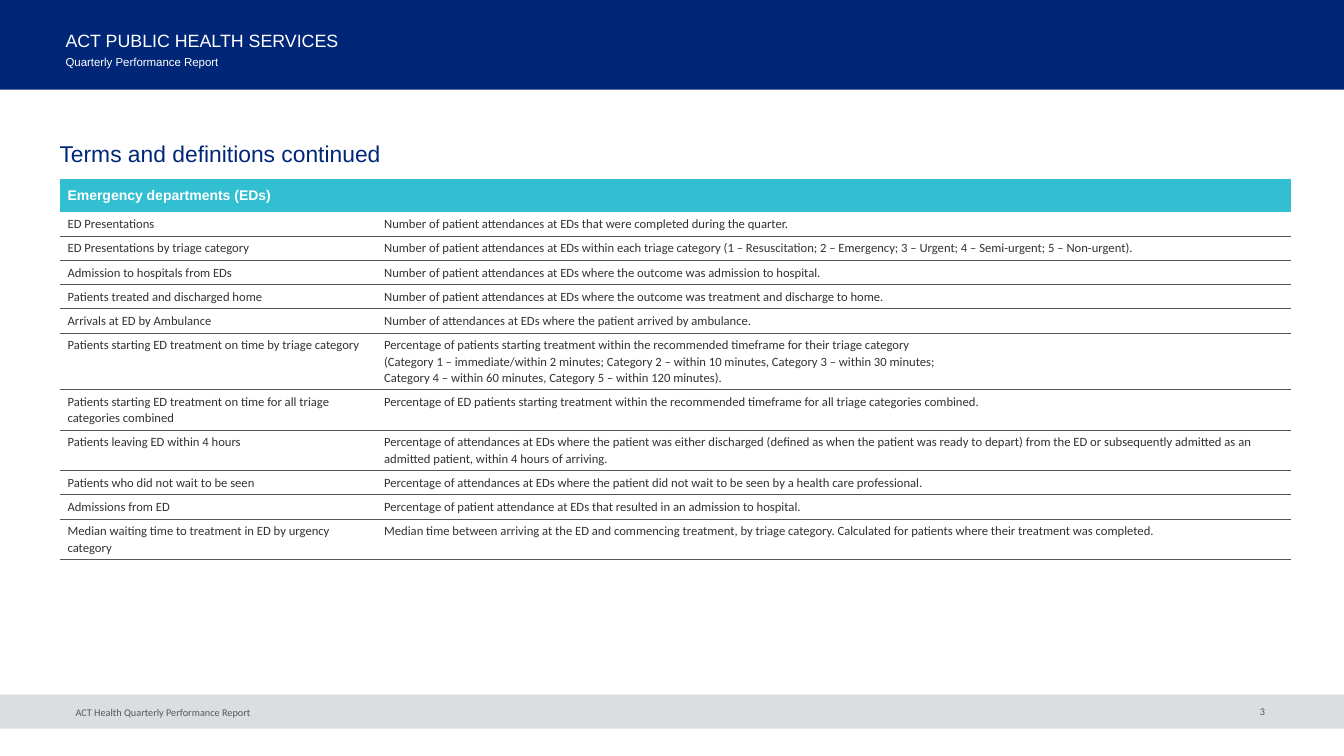
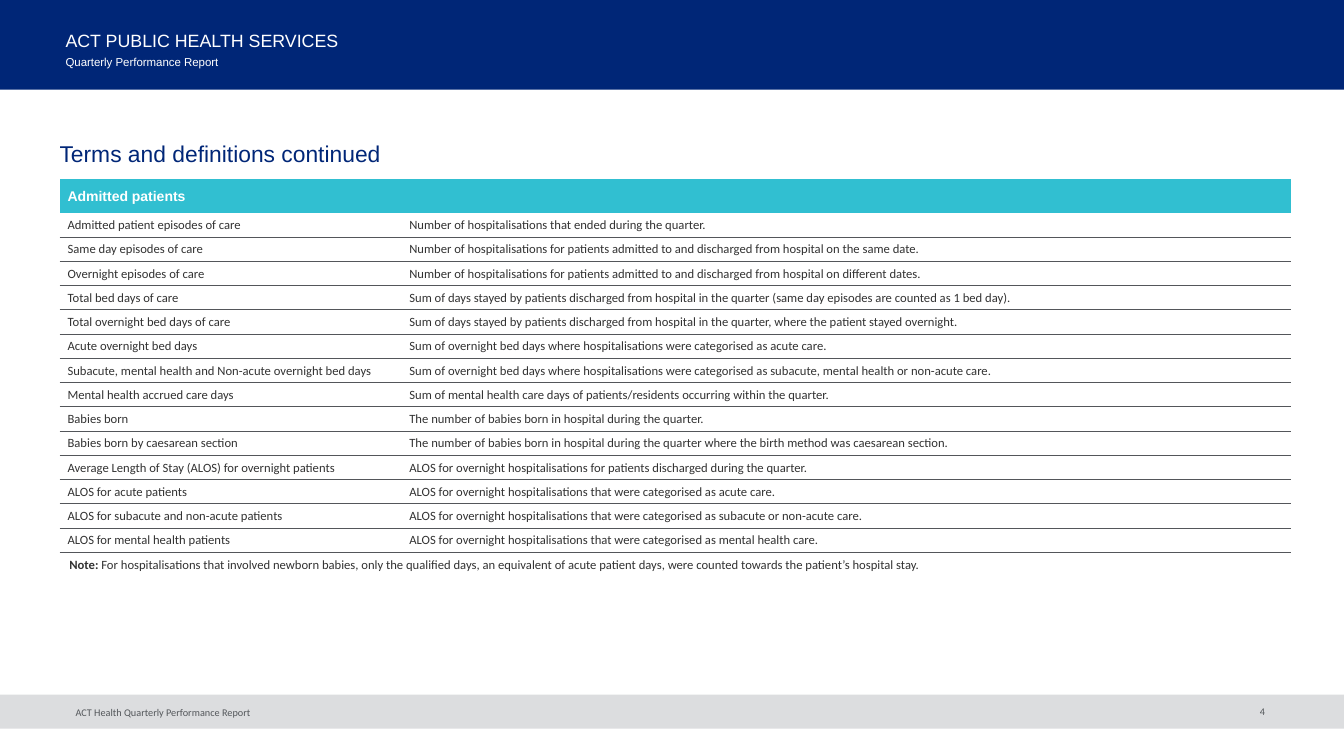
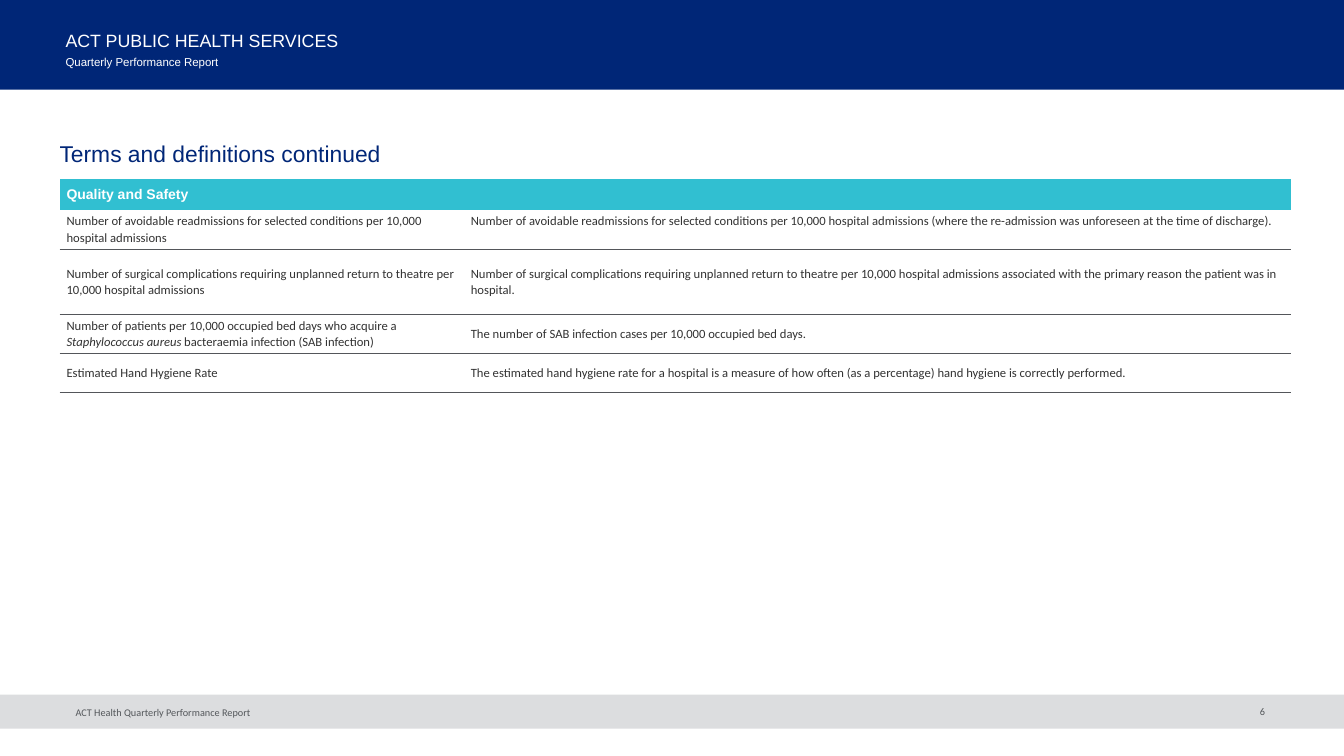
from dataclasses import dataclass
from typing import NamedTuple

from lxml import etree
from pptx import Presentation
from pptx.dml.color import RGBColor
from pptx.enum.shapes import MSO_SHAPE
from pptx.enum.text import MSO_ANCHOR, PP_ALIGN
from pptx.oxml.ns import qn
from pptx.util import Inches, Pt

RECTANGLE = MSO_SHAPE.RECTANGLE
TOP, MIDDLE = MSO_ANCHOR.TOP, MSO_ANCHOR.MIDDLE
LEFT, CENTER = PP_ALIGN.LEFT, PP_ALIGN.CENTER

NAVY = RGBColor(0x00, 0x26, 0x77)
TEAL = RGBColor(0x31, 0xBF, 0xD1)
SILVER = RGBColor(0xDC, 0xDD, 0xDF)
GREY = RGBColor(0x53, 0x56, 0x5A)
INK = RGBColor(0x32, 0x32, 0x32)
WHITE = RGBColor(0xFF, 0xFF, 0xFF)

SLIDE_WIDTH, SLIDE_HEIGHT = Inches(13.33), Inches(7.5)
LINE_PITCH = 0.16
LINE_SPACING = 1.07
RULE_WIDTH = Pt(0.5)
PLAIN_TABLE_STYLE = "{2D5ABB26-0587-4C30-8999-92F81FD0307C}"


class Area(NamedTuple):
    """Place and size as percentages of the slide's width and height."""
    left: float
    top: float
    width: float
    height: float

    def lengths(self) -> list[int]:
        sides = (SLIDE_WIDTH, SLIDE_HEIGHT) * 2
        return [round(side * share / 100) for side, share in zip(sides, self)]


class Span(NamedTuple):
    text: str
    bold: bool = False
    italic: bool = False


class Style(NamedTuple):
    font: str
    size: float
    color: RGBColor
    bold: bool = False


Content = str | tuple[Span, ...]


@dataclass(frozen=True)
class Label:
    area: Area
    style: Style
    anchor: MSO_ANCHOR = TOP
    align: PP_ALIGN = LEFT
    margins: tuple[float, float] = (0, 0)
    wrap: bool = True


@dataclass(frozen=True)
class Row:
    term: Content
    meaning: Content
    lines: float = 1
    meaning_anchor: MSO_ANCHOR | None = None


@dataclass(frozen=True)
class Glossary:
    number: int
    heading: str
    term_width: float
    heading_height: float
    rows: tuple[Row, ...]
    margins: tuple[float, float] = (0.08, 0.04)
    row_padding: float = 0.08
    anchor: MSO_ANCHOR = TOP
    note: tuple[Span, ...] = ()


HEADING_STYLE = Style("Arial", 10, WHITE, True)
BODY_STYLE = Style("Calibri", 9, INK)
SMALL_STYLE = Style("Calibri", 7.3, GREY)

BANDS = (
    (Area(0, 91.87, 100, 4.53), SILVER),
    (Area(0, 0, 100, 11.87), NAVY),
)
SHARED_LABELS = (
    ("ACT PUBLIC HEALTH SERVICES",
     Label(Area(4.88, 3.2, 39.08, 4.27), Style("Arial", 12.7, WHITE), MIDDLE)),
    ("Quarterly Performance Report",
     Label(Area(4.88, 6.53, 21.53, 3.33), Style("Arial", 8.2, WHITE), MIDDLE)),
    ("ACT Health Quarterly Performance Report",
     Label(Area(4.88, 92.8, 14.63, 2.93), SMALL_STYLE, margins=(0.1, 0.05), wrap=False)),
    ("Terms and definitions continued",
     Label(Area(4.43, 18.53, 91.3, 4.8), Style("Arial", 16.3, NAVY))),
)
PAGE_NUMBER = Label(Area(91.9, 92.8, 4.05, 2.67), SMALL_STYLE, MIDDLE, CENTER, (0.11, 0.06))
NOTE = Label(Area(4.43, 73.07, 91.6, 3.33), BODY_STYLE, margins=(0.1, 0.05))
TABLE_AREA = Area(4.43, 23.73, 91.6, 49)

GLOSSARIES = (
    Glossary(3, "Emergency departments (EDs)", 3.14, 0.32, (
        Row("ED Presentations",
            "Number of patient attendances at EDs that were completed during the quarter."),
        Row("ED Presentations by triage category",
            "Number of patient attendances at EDs within each triage category (1 – Resuscitation; "
            "2 – Emergency; 3 – Urgent; 4 – Semi-urgent; 5 – Non-urgent)."),
        Row("Admission to hospitals from EDs",
            "Number of patient attendances at EDs where the outcome was admission to hospital."),
        Row("Patients treated and discharged home",
            "Number of patient attendances at EDs where the outcome was treatment and discharge "
            "to home."),
        Row("Arrivals at ED by Ambulance",
            "Number of attendances at EDs where the patient arrived by ambulance."),
        Row("Patients starting ED treatment on time by triage category",
            "Percentage of patients starting treatment within the recommended timeframe for "
            "their triage category\n"
            "(Category 1 – immediate/within 2 minutes; Category 2 – within 10 minutes, "
            "Category 3 – within 30 minutes;\n"
            "Category 4 – within 60 minutes, Category 5 – within 120 minutes).", 3),
        Row("Patients starting ED treatment on time for all triage categories combined",
            "Percentage of ED patients starting treatment within the recommended timeframe for "
            "all triage categories combined.", 2),
        Row("Patients leaving ED within 4 hours",
            "Percentage of attendances at EDs where the patient was either discharged (defined "
            "as when the patient was ready to depart) from the ED or subsequently admitted as an "
            "admitted patient, within 4 hours of arriving.", 2),
        Row("Patients who did not wait to be seen",
            "Percentage of attendances at EDs where the patient did not wait to be seen by a "
            "health care professional."),
        Row("Admissions from ED",
            "Percentage of patient attendance at EDs that resulted in an admission to hospital."),
        Row("Median waiting time to treatment in ED by urgency category",
            "Median time between arriving at the ED and commencing treatment, by triage "
            "category. Calculated for patients where their treatment was completed.", 2),
    )),
    Glossary(4, "Admitted patients", 3.39, 0.33, (
        Row("Admitted patient episodes of care",
            "Number of hospitalisations that ended during the quarter."),
        Row("Same day episodes of care",
            "Number of hospitalisations for patients admitted to and discharged from hospital "
            "on the same date."),
        Row("Overnight episodes of care",
            "Number of hospitalisations for patients admitted to and discharged from hospital "
            "on different dates."),
        Row("Total bed days of care",
            "Sum of days stayed by patients discharged from hospital in the quarter (same day "
            "episodes are counted as 1 bed day)."),
        Row("Total overnight bed days of care",
            "Sum of days stayed by patients discharged from hospital in the quarter, where the "
            "patient stayed overnight."),
        Row("Acute overnight bed days",
            "Sum of overnight bed days where hospitalisations were categorised as acute care."),
        Row("Subacute, mental health and Non-acute overnight bed days",
            "Sum of overnight bed days where hospitalisations were categorised as subacute, "
            "mental health or non-acute care."),
        Row("Mental health accrued care days",
            "Sum of mental health care days of patients/residents occurring within the quarter."),
        Row("Babies born", "The number of babies born in hospital during the quarter."),
        Row("Babies born by caesarean section",
            "The number of babies born in hospital during the quarter where the birth method "
            "was caesarean section."),
        Row("Average Length of Stay (ALOS) for overnight patients",
            "ALOS for overnight hospitalisations for patients discharged during the quarter."),
        Row("ALOS for acute patients",
            "ALOS for overnight hospitalisations that were categorised as acute care."),
        Row("ALOS for subacute and non-acute patients",
            "ALOS for overnight hospitalisations that were categorised as subacute or "
            "non-acute care."),
        Row("ALOS for mental health patients",
            "ALOS for overnight hospitalisations that were categorised as mental health care."),
    ), note=(
        Span("Note: ", bold=True),
        Span("For hospitalisations that involved newborn babies, only the qualified days, an "
             "equivalent of acute patient days, were counted towards the patient’s hospital stay."),
    )),
    Glossary(6, "Quality and Safety", 4.01, 0.3, (
        Row("Number of avoidable readmissions for selected conditions per 10,000 hospital "
            "admissions",
            "Number of avoidable readmissions for selected conditions per 10,000 hospital "
            "admissions (where the re-admission was unforeseen at the time of discharge).",
            2, TOP),
        Row("Number of surgical complications requiring unplanned return to theatre per 10,000 "
            "hospital admissions",
            "Number of surgical complications requiring unplanned return to theatre per 10,000 "
            "hospital admissions associated with the primary reason the patient was in "
            "hospital.", 3.6),
        Row((Span("Number of patients per 10,000 occupied bed days who acquire a "),
             Span("Staphylococcus aureus", italic=True),
             Span(" bacteraemia infection (SAB infection)")),
            "The number of SAB infection cases per 10,000 occupied bed days.", 2),
        Row("Estimated Hand Hygiene Rate",
            "The estimated hand hygiene rate for a hospital is a measure of how often (as a "
            "percentage) hand hygiene is correctly performed.", 2),
    ), margins=(0.07, 0.03), row_padding=0.07, anchor=MIDDLE),
)


def set_margins(target, margins: tuple[float, float]) -> None:
    """Set the side and the top and bottom margins of a text frame or a cell."""
    across, down = margins
    for side, length in {"left": across, "right": across, "top": down, "bottom": down}.items():
        setattr(target, f"margin_{side}", Inches(length))


def write(frame, content: Content, style: Style, align: PP_ALIGN = LEFT,
          line_spacing: float = 1) -> None:
    """Fill a text frame; each line of a plain string becomes a paragraph."""
    if isinstance(content, str):
        paragraphs = [(Span(line),) for line in content.split("\n")]
    else:
        paragraphs = [content]
    for index, spans in enumerate(paragraphs):
        para = frame.paragraphs[0] if index == 0 else frame.add_paragraph()
        para.alignment, para.line_spacing = align, line_spacing
        for span in spans:
            run = para.add_run()
            run.text = span.text
            formats = {"name": style.font, "size": Pt(style.size),
                       "bold": style.bold or span.bold, "italic": span.italic}
            for name, value in formats.items():
                setattr(run.font, name, value)
            run.font.color.rgb = style.color


def add_band(page, area: Area, color: RGBColor) -> None:
    band = page.shapes.add_shape(RECTANGLE, *area.lengths())
    band.shadow.inherit = False
    band.fill.solid()
    band.fill.fore_color.rgb = color
    band.line.fill.background()


def add_label(page, content: Content, label: Label) -> None:
    frame = page.shapes.add_textbox(*label.area.lengths()).text_frame
    frame.word_wrap = label.wrap
    frame.vertical_anchor = label.anchor
    set_margins(frame, label.margins)
    write(frame, content, label.style, label.align)


def rule_below(cell) -> None:
    """Draw a thin grey line along the bottom of a cell."""
    line = etree.Element(qn("a:lnB"), w=str(RULE_WIDTH))
    fill = etree.SubElement(line, qn("a:solidFill"))
    etree.SubElement(fill, qn("a:srgbClr"), val=str(GREY))
    cell._tc.get_or_add_tcPr().insert(0, line)


def add_glossary(page, glossary: Glossary) -> None:
    left, top, width, height = TABLE_AREA.lengths()
    table = page.shapes.add_table(len(glossary.rows) + 1, 2, left, top, width, height).table
    table.first_row = table.horz_banding = False
    table._tbl.tblPr.find(qn("a:tableStyleId")).text = PLAIN_TABLE_STYLE
    table.columns[0].width = Inches(glossary.term_width)
    table.columns[1].width = width - Inches(glossary.term_width)

    table.rows[0].height = Inches(glossary.heading_height)
    heading = table.cell(0, 0)
    heading.merge(table.cell(0, 1))
    heading.fill.solid()
    heading.fill.fore_color.rgb = TEAL
    heading.vertical_anchor = MIDDLE
    set_margins(heading, (glossary.margins[0], 0))
    write(heading.text_frame, glossary.heading, HEADING_STYLE, line_spacing=LINE_SPACING)

    for index, row in enumerate(glossary.rows, start=1):
        table.rows[index].height = Inches(row.lines * LINE_PITCH + glossary.row_padding)
        anchors = (glossary.anchor, row.meaning_anchor or glossary.anchor)
        for column, content in enumerate((row.term, row.meaning)):
            cell = table.cell(index, column)
            cell.fill.background()
            cell.vertical_anchor = anchors[column]
            set_margins(cell, glossary.margins)
            rule_below(cell)
            write(cell.text_frame, content, BODY_STYLE, line_spacing=LINE_SPACING)


def main() -> None:
    deck = Presentation()
    deck.slide_width, deck.slide_height = SLIDE_WIDTH, SLIDE_HEIGHT
    for glossary in GLOSSARIES:
        page = deck.slides.add_slide(deck.slide_layouts[6])
        for area, color in BANDS:
            add_band(page, area, color)
        for text, label in SHARED_LABELS:
            add_label(page, text, label)
        add_glossary(page, glossary)
        add_label(page, str(glossary.number), PAGE_NUMBER)
        if glossary.note:
            add_label(page, glossary.note, NOTE)
    deck.save("out.pptx")


if __name__ == "__main__":
    main()
